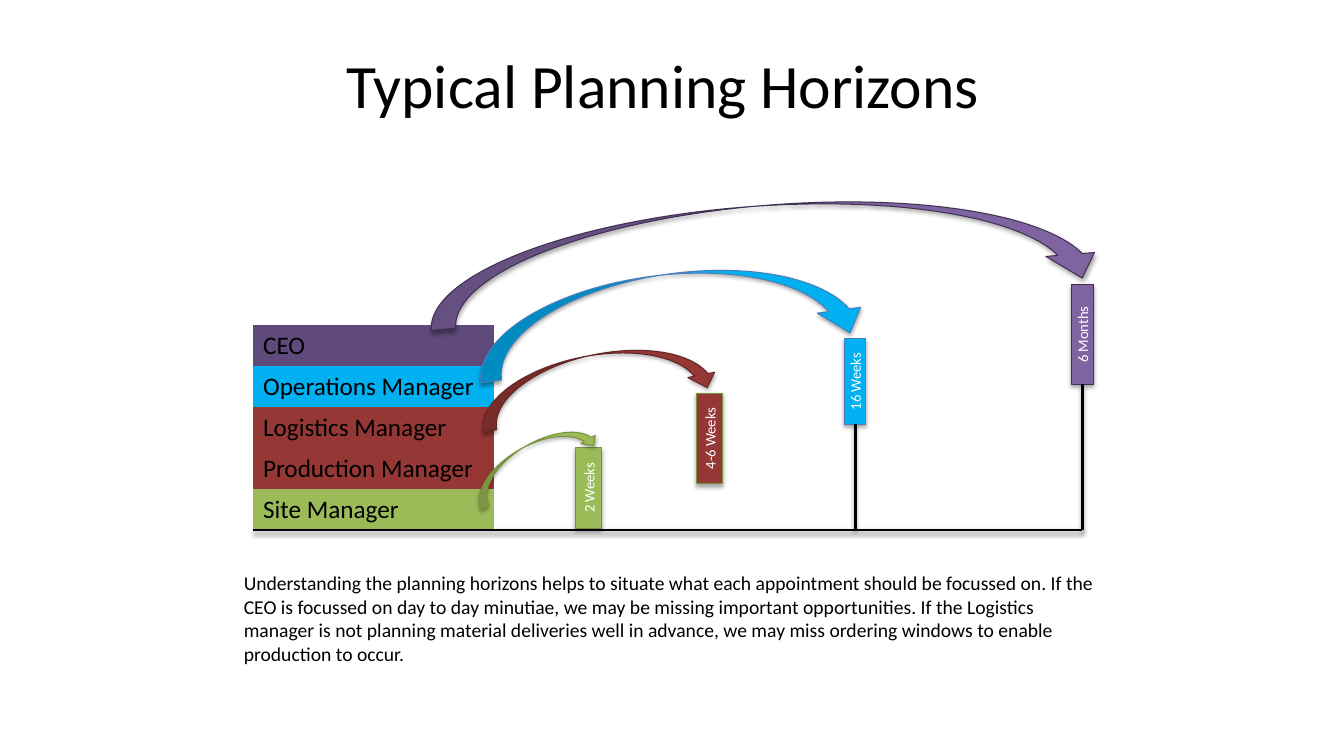
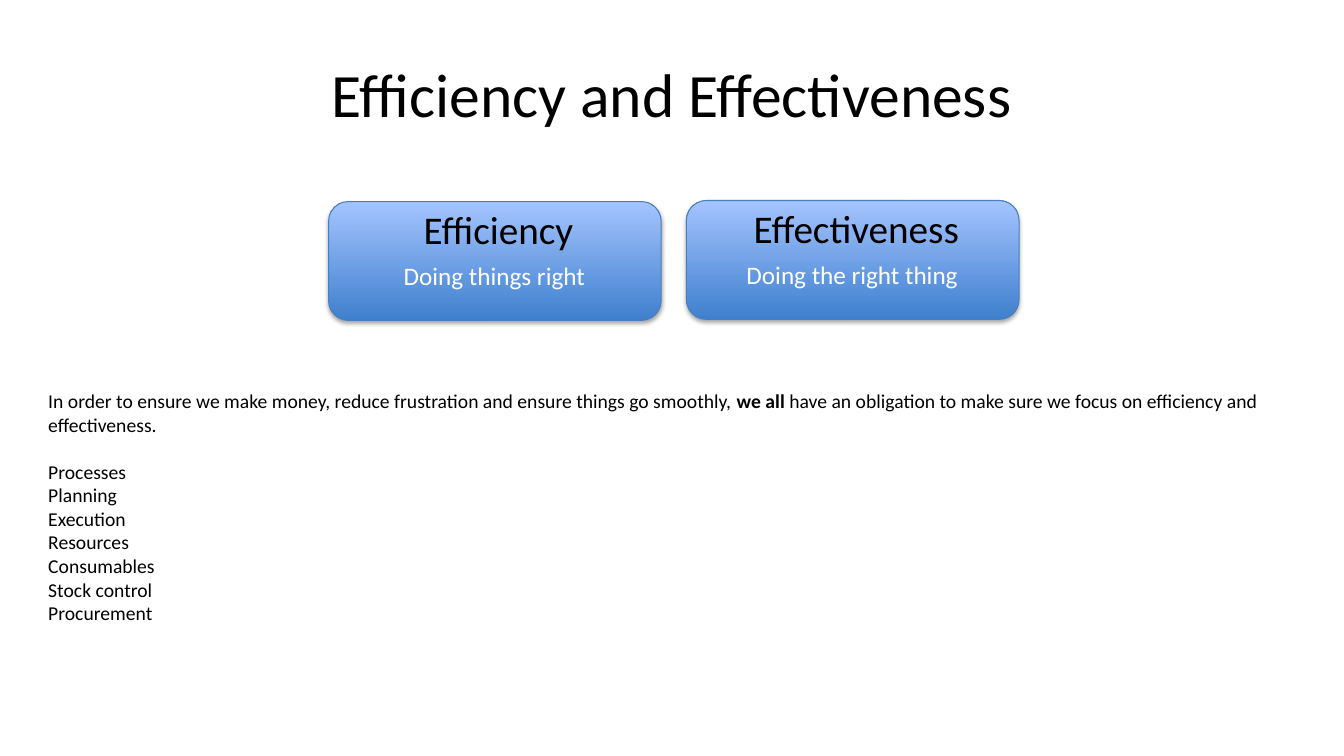
from lxml.etree import SubElement
from pptx import Presentation
from pptx.dml.color import RGBColor
from pptx.enum.shapes import MSO_CONNECTOR as Connector, MSO_SHAPE as Shape
from pptx.enum.text import MSO_ANCHOR as Anchor, PP_ALIGN as Align
from pptx.oxml.ns import qn
from pptx.util import Inches, Pt

COLORS = {
    "black": "000000", "white": "FFFFFF",
    "purple": "8064A2", "purple deep": "604A7B", "purple edge": "403152",
    "blue": "00B0F0", "blue edge": "4B7EBC",
    "red": "953735", "red edge": "632523",
    "green": "9BBB59", "green edge": "77933C",
    "card foot": "3F80CE", "card top": "A4C4FF",
}
FORMATS = {
    "title": {"size": Pt(44)},
    "heading": {"size": Pt(28)},
    "label": {"size": Pt(18)},
    "body": {"size": Pt(14)},
    "strong": {"size": Pt(14), "bold": True},
    "flag": {"size": Pt(10.5)},
}
GRID_COLUMNS = 160
NO_STYLE_NO_GRID = "{2D5ABB26-0587-4C30-8999-92F81FD0307C}"


def color(name):
    return RGBColor.from_string(COLORS[name])


class SlideBuilder:
    font_name = "Calibri"

    def __init__(self):
        self.deck = Presentation()
        self.deck.slide_width = Inches(13.33)
        self.deck.slide_height = Inches(7.5)
        self.cell = self.deck.slide_width / GRID_COLUMNS
        self.page = None

    def new_page(self):
        self.page = self.deck.slides.add_slide(self.deck.slide_layouts[6])

    def grid(self, *lengths):
        return [round(length * self.cell) for length in lengths]

    def add_span(self, para, words, style, ink="black"):
        span = para.add_run()
        span.text = words
        for name, value in {"name": self.font_name, **FORMATS[style]}.items():
            setattr(span.font, name, value)
        span.font.color.rgb = color(ink)

    def text(self, area, paragraphs, style="body", ink="black", align=Align.LEFT,
             anchor=Anchor.TOP, gaps=None):
        box = self.page.shapes.add_textbox(*self.grid(*area))
        frame = box.text_frame
        for name, value in {"word_wrap": True, "vertical_anchor": anchor}.items():
            setattr(frame, name, value)
        for index, content in enumerate(paragraphs):
            para = frame.add_paragraph() if index else frame.paragraphs[0]
            para.alignment = align
            if gaps and index in gaps:
                para.space_before = gaps[index]
            spans = [(content, style)] if isinstance(content, str) else content
            for words, span_style in spans:
                self.add_span(para, words, span_style, ink)

    def title(self, area, words):
        self.text(area, [words], "title", align=Align.CENTER, anchor=Anchor.MIDDLE)

    def cast_shadow(self, properties):
        effects = properties.find(qn("a:effectLst"))
        if effects is None:
            effects = SubElement(properties, qn("a:effectLst"))
        shadow = SubElement(effects, qn("a:outerShdw"), blurRad=str(Pt(3.1)),
                            dist=str(Pt(1.8)), dir="5400000", rotWithShape="0")
        tint = SubElement(shadow, qn("a:srgbClr"), val=COLORS["black"])
        SubElement(tint, qn("a:alpha"), val="35000")

    def shape(self, kind, area, fill, edge, rotation=0):
        shape = self.page.shapes.add_shape(kind, *self.grid(*area))
        shape.rotation = rotation
        if isinstance(fill, tuple):
            shape.fill.gradient()
            shape.fill.gradient_angle = 90
            for stop, name in zip(shape.fill.gradient_stops, fill):
                stop.color.rgb = color(name)
        else:
            shape.fill.solid()
            shape.fill.fore_color.rgb = color(fill)
        shape.line.color.rgb = color(edge)
        shape.line.width = Pt(0.75)
        shape.shadow.inherit = False
        self.cast_shadow(shape._element.spPr)
        return shape

    def arrow(self, area, fill, edge, rotation, adjustments=()):
        arrow = self.shape(Shape.CURVED_DOWN_ARROW, area, fill, edge, rotation)
        for index, value in enumerate(adjustments):
            arrow.adjustments[index] = value

    def flag(self, center, length, breadth, words, fill, edge):
        x, y = center
        area = (x - length / 2, y - breadth / 2, length, breadth)
        flag = self.shape(Shape.RECTANGLE, area, fill, edge, 270)
        flag.text_frame.vertical_anchor = Anchor.MIDDLE
        para = flag.text_frame.paragraphs[0]
        para.alignment = Align.CENTER
        self.add_span(para, words, "flag", "white")

    def line(self, *ends):
        line = self.page.shapes.add_connector(Connector.STRAIGHT, *self.grid(*ends))
        line.line.color.rgb = color("black")
        line.line.width = Pt(2)
        self.cast_shadow(line._element.spPr)

    def table(self, area, rows):
        frame = self.page.shapes.add_table(len(rows), 1, *self.grid(*area))
        table = frame.table
        for name in ("first_row", "horz_banding"):
            setattr(table, name, False)
        table._tbl.tblPr.find(qn("a:tableStyleId")).text = NO_STYLE_NO_GRID
        for index, (words, fill) in enumerate(rows):
            cell = table.cell(index, 0)
            cell.fill.solid()
            cell.fill.fore_color.rgb = color(fill)
            self.add_span(cell.text_frame.paragraphs[0], words, "label")

    def card(self, left, top, heading, caption):
        self.shape(Shape.ROUNDED_RECTANGLE, (left, top, 39.6, 14.16),
                   ("card foot", "card top"), "blue edge")
        self.text((left + 6.12, top - 0.12, 28.2, 6.84), [heading], "heading",
                  align=Align.CENTER)
        self.text((left + 2.7, top + 6.36, 34.08, 4.8), [caption], "label", "white",
                  Align.CENTER)


def planning_horizons(builder):
    builder.new_page()
    builder.title((32.4, 5, 93.12, 10.08), "Typical Planning Horizons")

    left, baseline = 30.12, 63.12
    builder.table((left, 38.76, 28.68, baseline - 38.76), [
        ("CEO", "purple deep"),
        ("Operations Manager", "blue"),
        ("Logistics Manager", "red"),
        ("Production Manager", "red"),
        ("Site Manager", "green"),
    ])

    flags = [
        ((128.85, 39.84), 11.88, 2.64, "6 Months", "purple", "purple edge", True),
        ((101.8, 45.42), 10.2, 2.52, "16 Weeks", "blue", "blue edge", True),
        ((84.48, 52.2), 10.8, 3.12, "4-6 Weeks", "red", "green edge", False),
        ((70.08, 58.08), 9.6, 3.12, "2 Weeks", "green", "green edge", False),
    ]
    for center, length, breadth, words, fill, edge, has_post in flags:
        builder.flag(center, length, breadth, words, fill, edge)
        if has_post:
            x, y = center
            builder.line(x, y + length / 2, x, baseline)
    builder.line(left, baseline, flags[0][0][0], baseline)

    arrows = [
        ((50.76, 24.48, 80.64, 11.64), "purple", "purple edge", 355.4),
        ((56.4, 32.64, 46.92, 9.84), "blue", "blue edge", 352.3, (0.25, 0.53, 0.29)),
        ((55.32, 52.92, 16.32, 3.96), "green", "green edge", 330.4),
        ((56.64, 42.24, 28.8, 6.48), "red", "red edge", 348.7),
    ]
    for arrow in arrows:
        builder.arrow(*arrow)

    builder.text((27.84, 67.44, 103.92, 12.48), [
        "Understanding the planning horizons helps to situate what each appointment "
        "should be focussed on. If the CEO is focussed on day to day minutiae, we may "
        "be missing important opportunities. If the Logistics manager is not planning "
        "material deliveries well in advance, we may miss ordering windows to enable "
        "production to occur."
    ])


def efficiency_and_effectiveness(builder):
    builder.new_page()
    builder.title((8, 3.6, 144, 15), "Efficiency and Effectiveness")
    builder.card(39.12, 24, "Efficiency", "Doing things right")
    builder.card(81.72, 23.88, "Effectiveness", "Doing the right thing")
    obligation = [
        ("In order to ensure we make money, reduce frustration and ensure things go "
         "smoothly, ", "body"),
        ("we all ", "strong"),
        ("have an obligation to make sure we focus on efficiency and effectiveness.",
         "body"),
    ]
    topics = ["Processes", "Planning", "Execution", "Resources", "Consumables",
              "Stock control", "Procurement"]
    builder.text((4.56, 45.72, 148.2, 29.52), [obligation, *topics], gaps={1: Pt(17)})


def main():
    builder = SlideBuilder()
    planning_horizons(builder)
    efficiency_and_effectiveness(builder)
    builder.deck.save("out.pptx")


if __name__ == "__main__":
    main()
